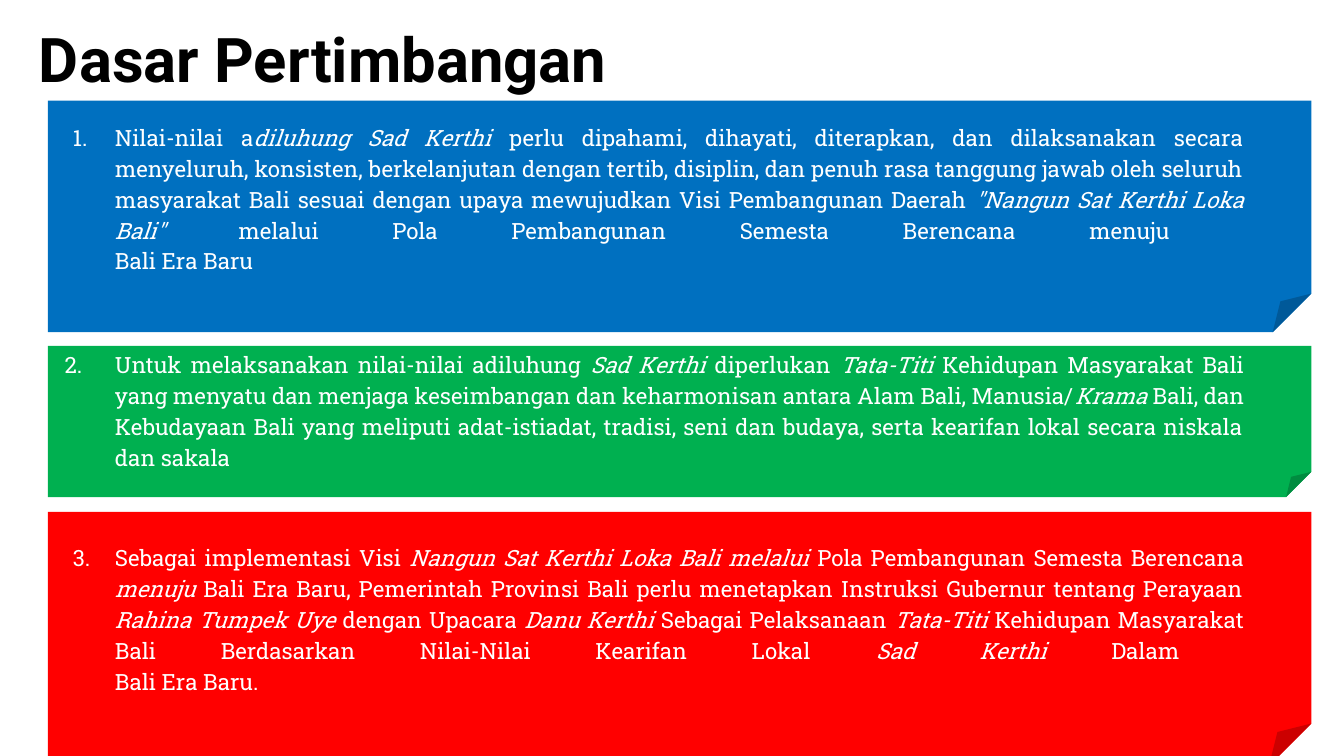
import copy

import lxml.etree
import pptx
import pptx.dml.color
import pptx.enum.shapes
import pptx.enum.text
import pptx.oxml.ns
import pptx.util

Pt = pptx.util.Pt
RGBColor = pptx.dml.color.RGBColor
qn = pptx.oxml.ns.qn

BLACK = RGBColor(0x00, 0x00, 0x00)
WHITE = RGBColor(0xFF, 0xFF, 0xFF)
BLUE = RGBColor(0x00, 0x70, 0xC0)
GREEN = RGBColor(0x00, 0xB0, 0x50)
RED = RGBColor(0xFF, 0x00, 0x00)

TITLE_FONT = {"name": "Roboto", "size": Pt(33), "bold": True}
BODY_FONT = {"name": "Roboto Slab", "size": Pt(12)}
TITLE_PARAGRAPH = {"alignment": pptx.enum.text.PP_ALIGN.LEFT, "line_spacing": 0.9}
BODY_PARAGRAPH = {
    "alignment": pptx.enum.text.PP_ALIGN.JUSTIFY,
    "level": 1,
    "line_spacing": 1.15,
    "space_before": Pt(0),
    "space_after": Pt(10),
}
FRAME = {
    "word_wrap": True,
    "auto_size": pptx.enum.text.MSO_AUTO_SIZE.NONE,
    "vertical_anchor": pptx.enum.text.MSO_ANCHOR.MIDDLE,
}
TEXT_MARGIN = Pt(28.8)

# Asterisks enclose italic words; each card has top, height, colour,
# hanging indent, first list number (None when typed in the text) and text.
CARDS = [
    (54, 124, BLUE, 22.5, 1,
     "Nilai-nilai a*diluhung Sad Kerthi *perlu dipahami, dihayati, diterapkan, "
     "dan dilaksanakan secara menyeluruh, konsisten, berkelanjutan dengan tertib, "
     "disiplin, dan penuh rasa tanggung jawab oleh seluruh masyarakat Bali sesuai "
     "dengan upaya mewujudkan Visi Pembangunan Daerah* \"Nangun Sat Kerthi Loka "
     "Bali\" *melalui Pola Pembangunan Semesta Berencana menuju \nBali Era Baru"),
    (185.3, 81, GREEN, 27, 2,
     "Untuk melaksanakan nilai-nilai adiluhung *Sad Kerthi *diperlukan *Tata-Titi "
     "*Kehidupan Masyarakat Bali yang menyatu dan menjaga keseimbangan dan "
     "keharmonisan antara Alam Bali, Manusia/*Krama* Bali, dan Kebudayaan Bali "
     "yang meliputi adat-istiadat, tradisi, seni dan budaya, serta kearifan lokal "
     "secara niskala dan sakala"),
    (274.3, 136, RED, 22.5, None,
     "3.\tSebagai implementasi Visi *Nangun Sat Kerthi Loka Bali melalui *Pola "
     "Pembangunan Semesta Berencana *menuju* Bali Era Baru, Pemerintah Provinsi "
     "Bali perlu menetapkan Instruksi Gubernur tentang Perayaan *Rahina Tumpek "
     "Uye *dengan Upacara *Danu Kerthi *Sebagai Pelaksanaan *Tata-Titi *Kehidupan "
     "Masyarakat Bali Berdasarkan Nilai-Nilai Kearifan Lokal *Sad Kerthi *Dalam "
     "\nBali Era Baru."),
]


def set_attributes(target, values):
    for name, value in values.items():
        setattr(target, name, value)


def add_styled_run(paragraph, text, font, color):
    run = paragraph.add_run()
    run.text = text
    set_attributes(run.font, font)
    run.font.color.rgb = color
    return run


presentation = pptx.Presentation()
presentation.slide_width = Pt(720)
presentation.slide_height = Pt(405)
slide = presentation.slides.add_slide(presentation.slide_layouts[5])

title = slide.shapes.title
set_attributes(title, {"left": Pt(13.7), "top": Pt(-5.8),
                       "width": Pt(620.6), "height": Pt(78.5)})
set_attributes(title.text_frame, FRAME)
paragraph = title.text_frame.paragraphs[0]
set_attributes(paragraph, TITLE_PARAGRAPH)
add_styled_run(paragraph, "Dasar Pertimbangan", TITLE_FONT, BLACK)

for top, height, color, hanging, number, text in CARDS:
    card = slide.shapes.add_shape(
        pptx.enum.shapes.MSO_SHAPE.FOLDED_CORNER,
        Pt(25.7), Pt(top), Pt(676.8), Pt(height))
    card.shadow.inherit = False
    card.fill.solid()
    card.fill.fore_color.rgb = color
    card.line.fill.background()
    set_attributes(card.text_frame, FRAME)

    paragraph = card.text_frame.paragraphs[0]
    set_attributes(paragraph, BODY_PARAGRAPH)
    properties = paragraph._p.get_or_add_pPr()
    properties.set("marL", str(TEXT_MARGIN))
    properties.set("marR", str(TEXT_MARGIN))
    properties.set("indent", str(-Pt(hanging)))
    if number:
        lxml.etree.SubElement(properties, qn("a:buAutoNum"),
                              type="arabicPeriod", startAt=str(number))

    for index, part in enumerate(text.split("*")):
        font = BODY_FONT | {"italic": index % 2 == 1}
        for line_index, line in enumerate(part.split("\n")):
            if line_index:
                paragraph.add_line_break()
                # The break takes the run's size so the line height stays even.
                paragraph._p[-1].append(copy.deepcopy(run._r.rPr))
            run = add_styled_run(paragraph, line, font, WHITE)

presentation.save("out.pptx")
